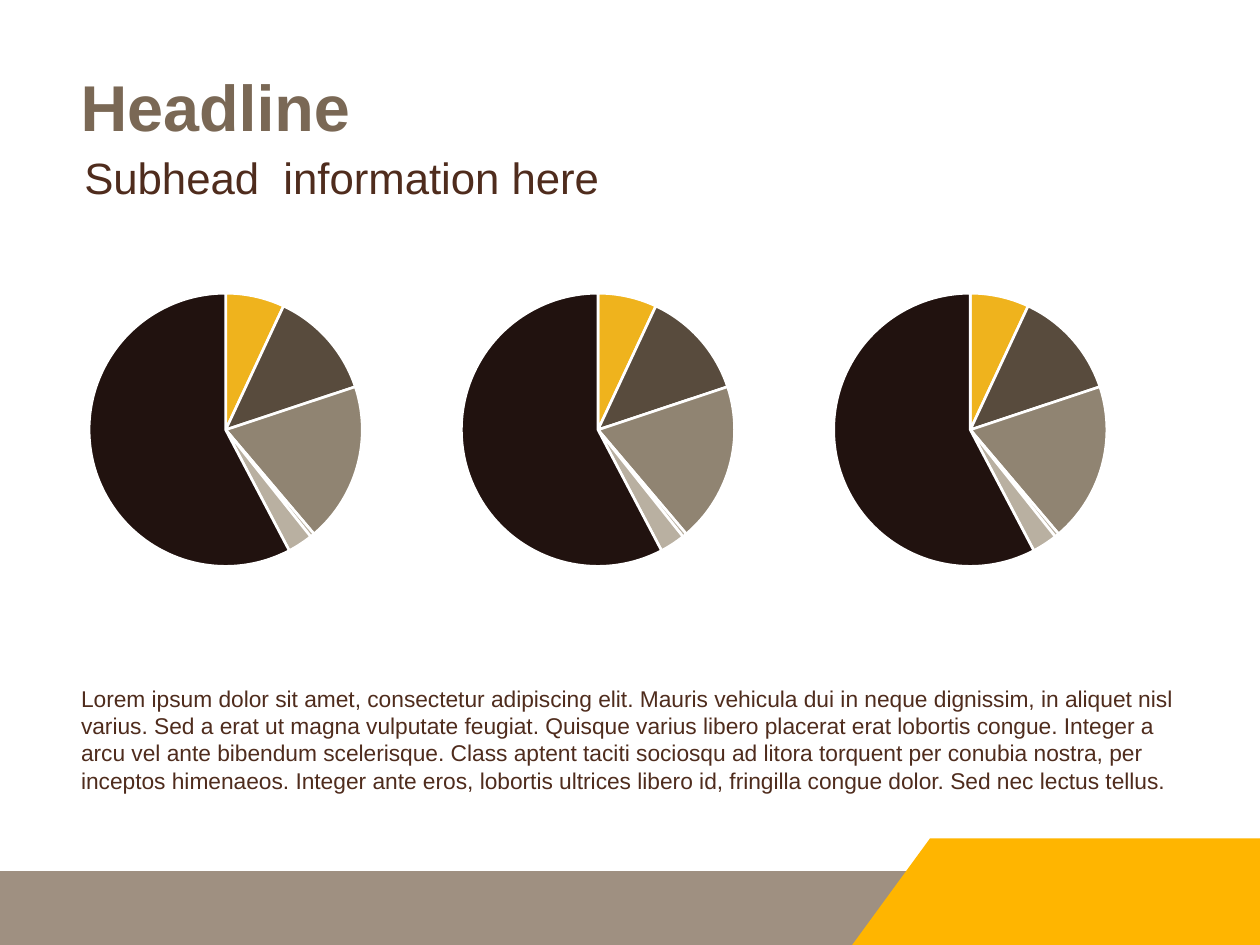
import pptx
import pptx.chart.data
import pptx.dml.color
import pptx.enum.chart
import pptx.enum.shapes
import pptx.enum.text
import pptx.oxml
import pptx.util
from dataclasses import dataclass
from pptx.util import Cm


@dataclass(frozen=True)
class Theme:
    font: str = "Arial"
    chart_font: str = "Calibri"
    headline: str = "7A6855"
    text: str = "4F2C1D"
    band: str = "9F9081"
    accent: str = "FFB500"
    edge: str = "FFFFFF"
    chart_text: str = "000000"
    slices: tuple = ("EFB31D", "584B3D", "908472", "B9B0A1", "B9B0A1", "21120F")
    headline_size: float = 37
    subhead_size: float = 25
    body_size: float = 13
    chart_size: float = 12


THEME = Theme()
SHARES = (7, 13, 19, 0.5, 3, 58)
BODY = (
    "Lorem ipsum dolor sit amet, consectetur adipiscing elit. Mauris vehicula dui in neque "
    "dignissim, in aliquet nisl varius. Sed a erat ut magna vulputate feugiat. Quisque varius "
    "libero placerat erat lobortis congue. Integer a arcu vel ante bibendum scelerisque. Class "
    "aptent taciti sociosqu ad litora torquent per conubia nostra, per inceptos himenaeos. "
    "Integer ante eros, lobortis ultrices libero id, fringilla congue dolor. Sed nec lectus tellus."
)


def rgb(value):
    return pptx.dml.color.RGBColor.from_string(value)


def place(part, left, top, width, height):
    part.left, part.top, part.width, part.height = Cm(left), Cm(top), Cm(width), Cm(height)


def paint(part, color):
    part.shadow.inherit = False
    part.fill.solid()
    part.fill.fore_color.rgb = rgb(color)
    part.line.fill.background()


def write(part, words, size, color, anchor, bold=False, spacing=1.0):
    frame = part.text_frame
    frame.word_wrap = True
    frame.auto_size = pptx.enum.text.MSO_AUTO_SIZE.NONE
    frame.vertical_anchor = anchor
    paragraph = frame.paragraphs[0]
    properties = paragraph._p.get_or_add_pPr()
    properties.set("marL", "0")
    properties.set("indent", "0")
    properties.append(pptx.oxml.parse_xml(
        '<a:buNone xmlns:a="http://schemas.openxmlformats.org/drawingml/2006/main"/>'))
    paragraph.alignment = pptx.enum.text.PP_ALIGN.LEFT
    paragraph.line_spacing = spacing
    paragraph.space_before = pptx.util.Pt(0)
    run = paragraph.add_run()
    run.text = words
    run.font.name = THEME.font
    run.font.size = pptx.util.Pt(size)
    run.font.bold = bold
    run.font.color.rgb = rgb(color)


def add_footer(slide, left, top, width, height):
    band_top = top + 0.66
    band = slide.shapes.add_shape(
        pptx.enum.shapes.MSO_SHAPE.RECTANGLE,
        Cm(left), Cm(band_top), Cm(18.95), Cm(top + height - band_top))
    paint(band, THEME.band)
    right, bottom = left + width, top + height
    outline = slide.shapes.build_freeform(Cm(right - 6.65), Cm(top), scale=1.0)
    outline.add_line_segments(
        [(Cm(right), Cm(top)), (Cm(right), Cm(bottom)), (Cm(right - 8.22), Cm(bottom))],
        close=True)
    paint(outline.convert_to_shape(), THEME.accent)


def add_heading(slide, left, top, width):
    top_anchor = pptx.enum.text.MSO_ANCHOR.TOP
    headline = slide.shapes.title
    place(headline, left, top, width, 2.39)
    write(headline, "Headline", THEME.headline_size, THEME.headline, top_anchor, True, 0.9)
    subhead = slide.shapes.add_textbox(Cm(left + 0.08), Cm(top + 1.52), Cm(width), Cm(1.32))
    write(subhead, "Subhead  information here", THEME.subhead_size, THEME.text, top_anchor)


def add_pie(slide, left, top, width, height):
    data = pptx.chart.data.CategoryChartData()
    data.categories = [str(number) for number in range(1, len(SHARES) + 1)]
    data.add_series("Series 1", SHARES)
    pie = slide.shapes.add_chart(
        pptx.enum.chart.XL_CHART_TYPE.PIE,
        Cm(left), Cm(top), Cm(width), Cm(height), data).chart
    pie.has_legend = False
    pie.has_title = False
    pie.font.name = THEME.chart_font
    pie.font.size = pptx.util.Pt(THEME.chart_size)
    pie.font.color.rgb = rgb(THEME.chart_text)
    plot = pie.plots[0]
    plot.vary_by_categories = True
    for index, color in enumerate(THEME.slices):
        look = plot.series[0].points[index].format
        look.fill.solid()
        look.fill.fore_color.rgb = rgb(color)
        look.line.color.rgb = rgb(THEME.edge)
        look.line.width = pptx.util.Pt(1.5)


def add_pie_row(slide, left, top, width, height, count=3):
    pie_width = 8.22
    step = (width - pie_width) / (count - 1)
    for column in range(count):
        add_pie(slide, left + column * step, top, pie_width, height)


def add_body(slide, left, top, width, height):
    body = slide.placeholders[1]
    place(body, left, top, width, height)
    write(body, BODY, THEME.body_size, THEME.text, pptx.enum.text.MSO_ANCHOR.MIDDLE)


def main():
    deck = pptx.Presentation()
    deck.slide_width, deck.slide_height = Cm(25.4), Cm(19.05)
    slide = deck.slides.add_slide(deck.slide_layouts[1])
    add_footer(slide, 0, 16.9, 25.4, 2.15)
    add_heading(slide, 1.37, 1.4, 22.89)
    add_pie_row(slide, 0.44, 5.56, 23.23, 6.21)
    add_body(slide, 1.38, 13.77, 22.96, 2.26)
    deck.save("out.pptx")


if __name__ == "__main__":
    main()
